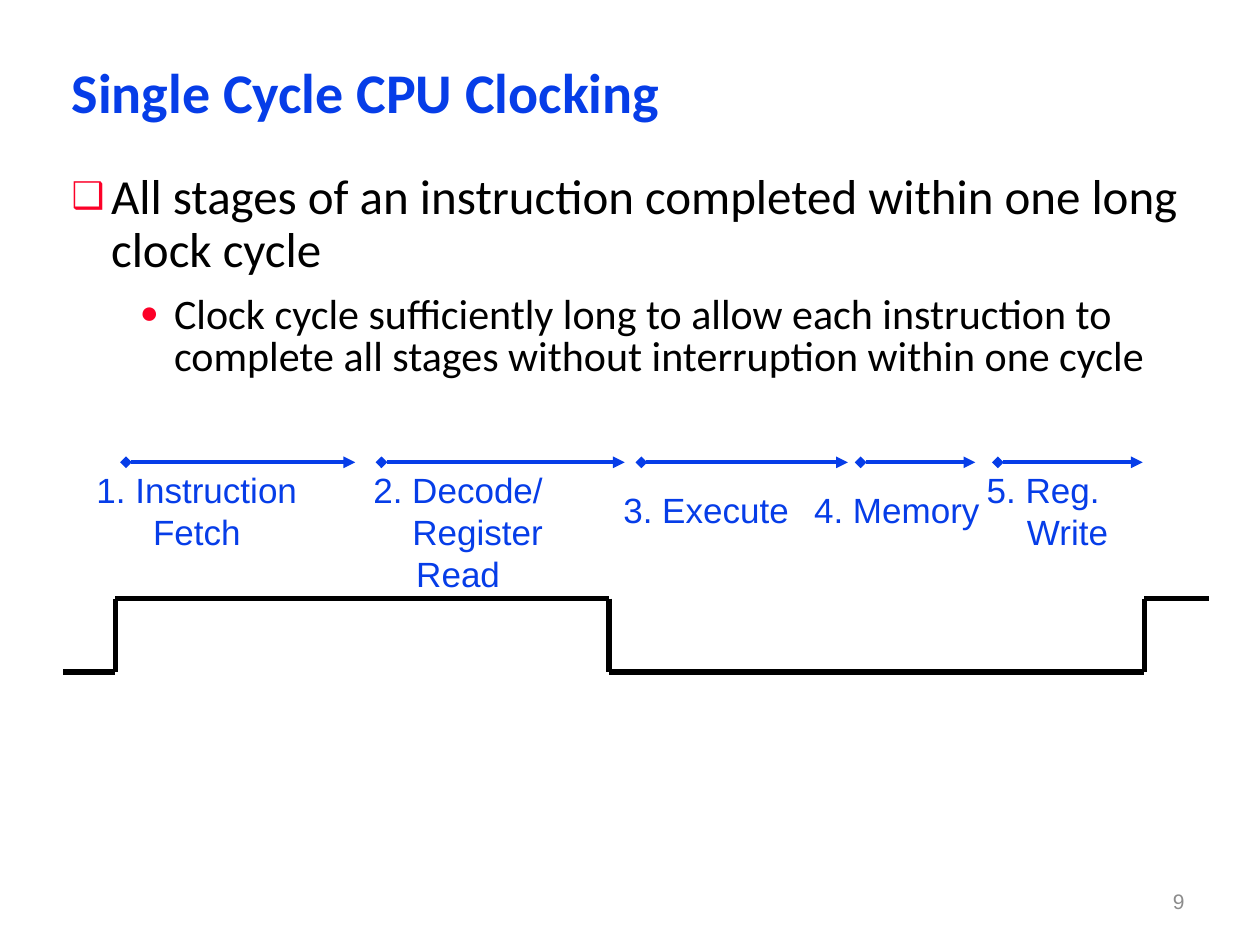
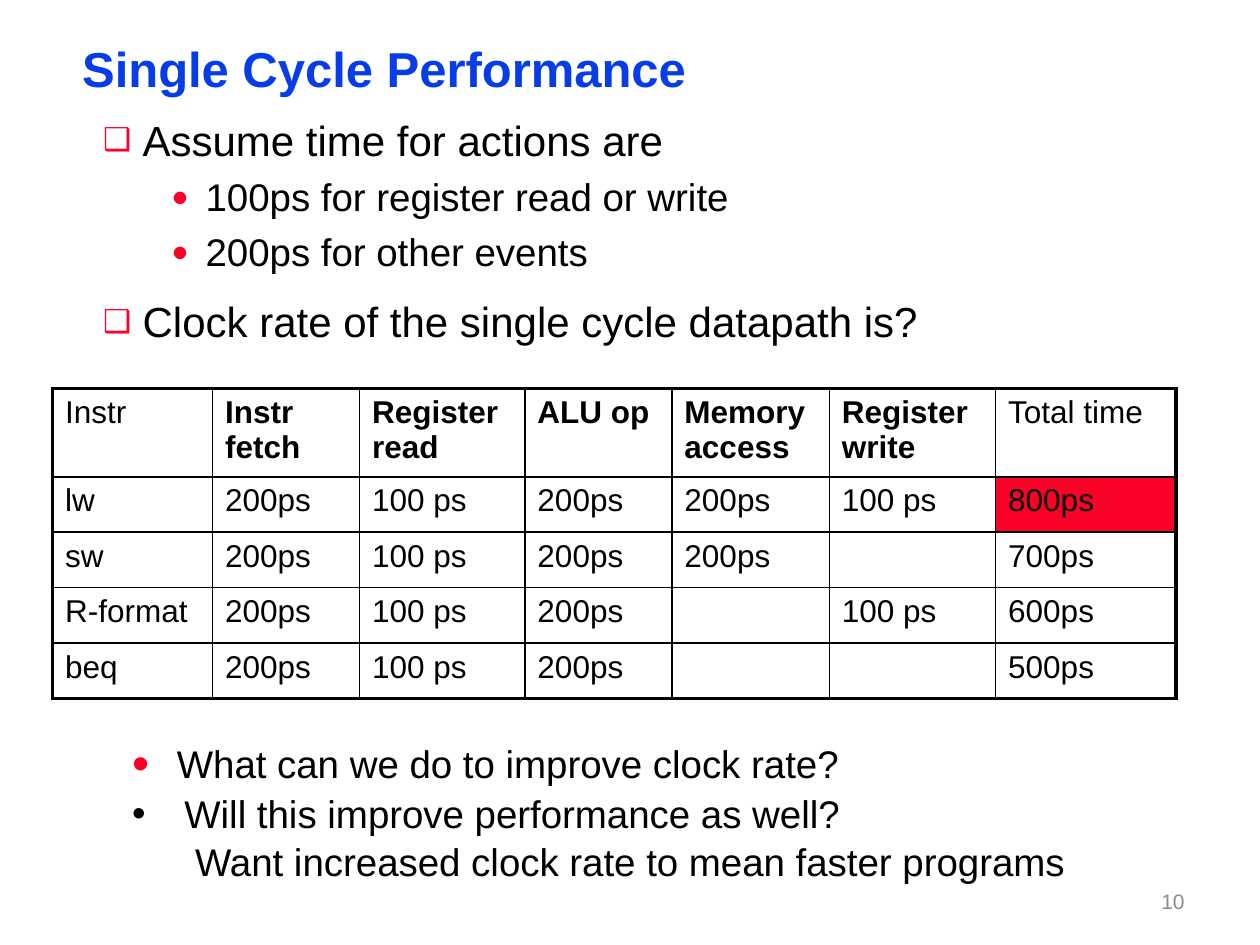
from itertools import pairwise

from lxml import etree
from pptx import Presentation
from pptx.dml.color import RGBColor
from pptx.enum.shapes import MSO_CONNECTOR
from pptx.enum.text import MSO_ANCHOR, PP_ALIGN
from pptx.oxml.ns import qn
from pptx.util import Pt

STRAIGHT = MSO_CONNECTOR.STRAIGHT
TOP, MIDDLE = MSO_ANCHOR.TOP, MSO_ANCHOR.MIDDLE
CENTER, RIGHT = PP_ALIGN.CENTER, PP_ALIGN.RIGHT

BLUE, RED, BLACK, GRAY = "063DE8", "FC0128", "000000", "8C8C8C"
TIGHT = (5, 2.4)
NORMAL = (7.2, 3.6)

# Outline levels: bullet, left margin, hanging indent, line spacing, space before per point of text
LEVELS = [
    ("❑", 22.5, -22.5, 0.9, 0.65),
    ("●", 58.5, -19.5, 0.85, 0.4),
]

# Stage: lines as (text, left margin), label left, width and top, arrow start and end
STAGES = [
    ([("1. Instruction", 0), ("Fetch", 0)], 48, 129, 267.8, 72, 203),
    ([("2. Decode/", 0), ("Register", 22.2), ("Read", 0)], 206, 111.6, 267.8, 218, 357),
    ([("3. Execute", 0)], 349, 109, 279.4, 366.5, 484.5),
    ([("4. Memory", 0)], 458, 109, 279.4, 491.8, 557.3),
    ([("5. Reg.", 0), ("Write", 27.8)], 551.5, 89.3, 267.8, 570.2, 653),
]
ARROW_Y = 264.2
LOW, HIGH = 384, 342
CLOCK_POINTS = [(36, LOW), (66, LOW), (66, HIGH), (348, HIGH),
                (348, LOW), (654, LOW), (654, HIGH), (691, HIGH)]

TIMES = [
    ["Instr", "Instr fetch", "Register read", "ALU op", "Memory access",
     "Register write", "Total time"],
    ["lw", "200ps", "100 ps", "200ps", "200ps", "100 ps", "800ps"],
    ["sw", "200ps", "100 ps", "200ps", "200ps", "", "700ps"],
    ["R-format", "200ps", "100 ps", "200ps", "", "100 ps", "600ps"],
    ["beq", "200ps", "100 ps", "200ps", "", "", "500ps"],
]
COLUMN_WIDTHS = [91.5, 84, 94.5, 84, 90, 95, 103]
ROW_HEIGHTS = [48] + [31.7] * 4
SLOWEST = (1, 6)


def color(hex_text):
    return RGBColor.from_string(hex_text)


def add_xml(parent, tag, **attributes):
    return etree.SubElement(parent, qn(tag), attributes)


class Page:
    """Holds the deck's style and the slide being filled."""

    def __init__(self, deck, number, font):
        self.slide = deck.slides.add_slide(deck.slide_layouts[6])
        self.font = font
        box = self.box(516, 500.4, 168, 28.8, anchor=MIDDLE)
        self.para(box, str(number), 12, GRAY, font="Arial", alignment=RIGHT)

    def box(self, left, top, width, height, insets=NORMAL, anchor=TOP):
        frame = self.slide.shapes.add_textbox(
            Pt(left), Pt(top), Pt(width), Pt(height)).text_frame
        across, down = insets
        values = {
            "word_wrap": True, "vertical_anchor": anchor,
            "margin_left": Pt(across), "margin_right": Pt(across),
            "margin_top": Pt(down), "margin_bottom": Pt(down),
        }
        for name, value in values.items():
            setattr(frame, name, value)
        return frame

    def para(self, frame, text, size, ink=BLACK, bold=False, font=None,
             margin=0, indent=0, **layout):
        """Fill the empty first paragraph, or add one; layout sets its attributes."""
        para = frame.paragraphs[0]
        if para.runs:
            para = frame.add_paragraph()
        for name, value in layout.items():
            setattr(para, name, value)
        properties = para._p.get_or_add_pPr()
        properties.set("marL", str(Pt(margin)))
        properties.set("indent", str(Pt(indent)))
        span = para.add_run()
        span.text = text
        values = {"name": font or self.font, "size": Pt(size), "bold": bold}
        for name, value in values.items():
            setattr(span.font, name, value)
        span.font.color.rgb = color(ink)
        return para

    def bullet(self, para, mark, ink, percent):
        properties = para._p.get_or_add_pPr()
        add_xml(add_xml(properties, "a:buClr"), "a:srgbClr", val=ink)
        add_xml(properties, "a:buSzPct", val=str(percent * 1000))
        add_xml(properties, "a:buFont", typeface="Arial")
        add_xml(properties, "a:buChar", char=mark)

    def title(self, text, left, top, size):
        box = self.box(left, top, 642, size * 1.2, TIGHT)
        self.para(box, text, size, BLUE, bold=True, line_spacing=0.87)

    def outline(self, items, left, top, width, height, sizes):
        """Items are (level, text); sizes gives the text size of each level."""
        box = self.box(left, top, width, height, TIGHT)
        for level, text in items:
            mark, margin, indent, spacing, before = LEVELS[level]
            size = sizes[level]
            para = self.para(box, text, size, margin=margin, indent=indent,
                             line_spacing=spacing, space_before=Pt(size * before))
            self.bullet(para, mark, RED, 75)

    def line(self, start, end, ink, width, head=None, tail=None):
        line = self.slide.shapes.add_connector(
            STRAIGHT, *(Pt(value) for value in (*start, *end)))
        line.line.color.rgb = color(ink)
        line.line.width = Pt(width)
        properties = line._element.spPr
        outline = properties.find(qn("a:ln"))
        for tag, kind in (("a:headEnd", head), ("a:tailEnd", tail)):
            if kind:
                add_xml(outline, tag, type=kind)
        add_xml(properties, "a:effectLst")

    def border(self, cell, widths):
        """Widths are for the left, right, top and bottom sides, in that order."""
        properties = cell._tc.get_or_add_tcPr()
        for side, width in zip("LRTB", widths):
            edge = add_xml(properties, f"a:ln{side}", w=str(Pt(width)))
            add_xml(add_xml(edge, "a:solidFill"), "a:srgbClr", val=BLACK)

    def table(self, rows, left, top, widths, heights, highlight):
        table = self.slide.shapes.add_table(
            len(rows), len(widths), Pt(left), Pt(top),
            Pt(sum(widths)), Pt(sum(heights))).table
        table.first_row = table.horz_banding = False
        for column, width in zip(table.columns, widths):
            column.width = Pt(width)
        for row, height in zip(table.rows, heights):
            row.height = Pt(height)
        last_row, last_column = len(rows) - 1, len(widths) - 1
        for r, texts in enumerate(rows):
            for c, text in enumerate(texts):
                cell = table.cell(r, c)
                self.border(cell, (
                    2.25 if c == 0 else 1,
                    2.25 if c == last_column else 1,
                    {0: 2.25, 1: 1.5}.get(r, 1),
                    {0: 1.5, last_row: 2.25}.get(r, 1),
                ))
                if (r, c) == highlight:
                    cell.fill.solid()
                    cell.fill.fore_color.rgb = color(RED)
                else:
                    cell.fill.background()
                if text:
                    header = r == 0 and 0 < c < last_column
                    self.para(cell.text_frame, text, 18, bold=header)


def build_clocking(deck):
    page = Page(deck, 9, "Calibri")
    page.title("Single Cycle CPU Clocking", 36, 36, 32)
    page.outline([
        (0, "All stages of an instruction completed within one long clock cycle"),
        (1, "Clock cycle sufficiently long to allow each instruction to "
            "complete all stages without interruption within one cycle"),
    ], 36, 96, 642, 127, (28, 24))
    for lines, left, width, top, start, end in STAGES:
        label = page.box(left, top, width, 23 * len(lines), (0, 0))
        for text, margin in lines:
            page.para(label, text, 20, BLUE, font="Arial",
                      margin=margin, alignment=CENTER)
        page.line((start, ARROW_Y), (end, ARROW_Y), BLUE, 2.25, "diamond", "triangle")
    for start, end in pairwise(CLOCK_POINTS):
        page.line(start, end, BLACK, 3)


def build_performance(deck):
    page = Page(deck, 10, "Arial")
    page.title("Single Cycle Performance", 42, 24, 28)
    page.outline([
        (0, "Assume time for actions are"),
        (1, "100ps for register read or write"),
        (1, "200ps for other events"),
        (0, "Clock rate of the single cycle datapath is?"),
    ], 54, 66, 652, 142, (24, 22))
    page.table(TIMES, 30, 222, COLUMN_WIDTHS, ROW_HEIGHTS, SLOWEST)
    questions = page.box(68.4, 419.4, 651.6, 93)
    for text, hang, ink, percent in (
            ("What can we do to improve clock rate?", 25.6, RED, 127),
            ("Will this improve performance as well?", 29.9, BLACK, 100)):
        para = page.para(questions, text, 22, margin=hang, indent=-hang,
                         space_before=Pt(2))
        page.bullet(para, "•", ink, percent)
    page.para(questions, "Want increased clock rate to mean faster programs", 22,
              margin=36, space_before=Pt(1))


def main():
    deck = Presentation()
    deck.slide_width, deck.slide_height = Pt(720), Pt(540)
    build_clocking(deck)
    build_performance(deck)
    deck.save("out.pptx")


if __name__ == "__main__":
    main()
